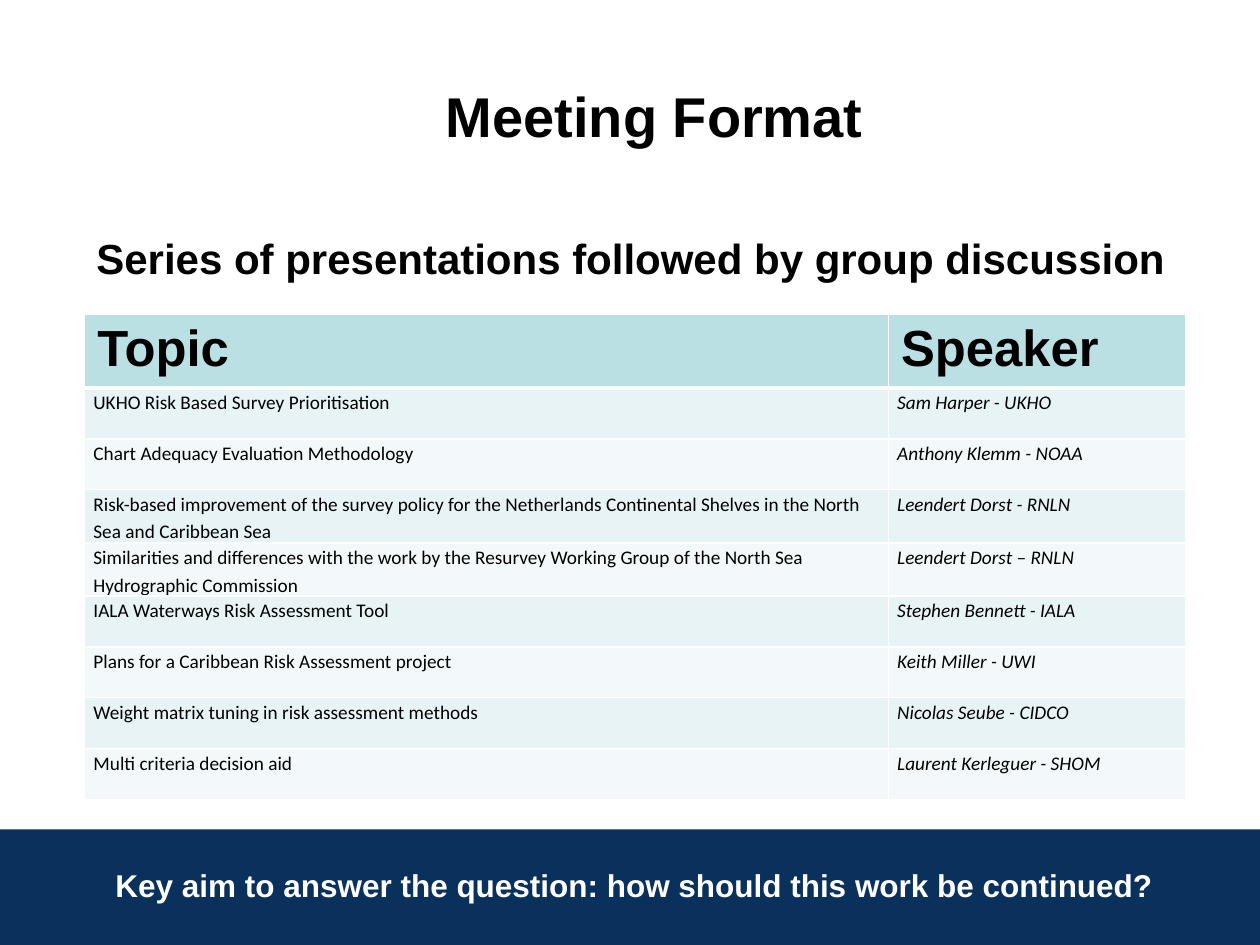
from dataclasses import dataclass

from lxml import etree
from pptx import Presentation
from pptx.dml.color import RGBColor as RGB
from pptx.enum.shapes import MSO_SHAPE as SHAPE
from pptx.enum.text import MSO_ANCHOR as ANCHOR, PP_ALIGN as ALIGN
from pptx.oxml.ns import qn
from pptx.util import Pt


@dataclass(frozen=True)
class Theme:
    heading_font: str = "Arial"
    table_font: str = "Calibri"
    black: str = "000000"
    white: str = "FFFFFF"
    navy: str = "09315B"
    header: str = "BBE0E3"
    bands: tuple = ("E7F3F4", "F3F9FA")
    title: float = 32
    subtitle: float = 24
    table_head: float = 29
    table_body: float = 11
    aim: float = 18


T = Theme()
HEADINGS = ("Topic", "Speaker")
TALKS = [
    ("UKHO Risk Based Survey Prioritisation", "Sam Harper - UKHO"),
    ("Chart Adequacy Evaluation Methodology", "Anthony Klemm - NOAA"),
    ("Risk-based improvement of the survey policy for the Netherlands "
     "Continental Shelves in the North Sea and Caribbean Sea", "Leendert Dorst - RNLN"),
    ("Similarities and differences with the work by the Resurvey Working Group "
     "of the North Sea Hydrographic Commission", "Leendert Dorst – RNLN"),
    ("IALA Waterways Risk Assessment Tool", "Stephen Bennett - IALA"),
    ("Plans for a Caribbean Risk Assessment project", "Keith Miller - UWI"),
    ("Weight matrix tuning in risk assessment methods", "Nicolas Seube - CIDCO"),
    ("Multi criteria decision aid", "Laurent Kerleguer - SHOM"),
]


def style(p, font, size, color, bold=False, italic=False):
    f = p.font
    f.name, f.size, f.bold, f.italic = font, Pt(size), bold, italic
    f.color.rgb = RGB.from_string(color)


def add_text(s, box, text, size, color=T.black, align=ALIGN.CENTER,
             anchor=ANCHOR.BOTTOM, spacing=None, bottom=3.6):
    tf = s.shapes.add_textbox(*map(Pt, box)).text_frame
    tf.word_wrap = True
    tf.vertical_anchor = anchor
    tf.margin_bottom = Pt(bottom)
    p = tf.paragraphs[0]
    p.text, p.alignment, p.line_spacing = text, align, spacing
    style(p, T.heading_font, size, color, bold=True)


def add_banner(s, box):
    sp = s.shapes.add_shape(SHAPE.RECTANGLE, *map(Pt, box))
    sp.shadow.inherit = False
    sp.fill.solid()
    sp.fill.fore_color.rgb = RGB.from_string(T.navy)
    sp.line.fill.background()


def set_borders(cell, bottom):
    tc_pr = cell._tc.get_or_add_tcPr()
    for i, (side, width) in enumerate(zip("LRTB", (1, 1, 1, bottom))):
        ln = etree.Element(qn(f"a:ln{side}"), w=str(Pt(width)))
        fill = etree.SubElement(ln, qn("a:solidFill"))
        etree.SubElement(fill, qn("a:srgbClr"), val=T.white)
        tc_pr.insert(i, ln)


def fill_cell(cell, text, fill, bottom=1):
    cell.text = text
    cell.fill.solid()
    cell.fill.fore_color.rgb = RGB.from_string(fill)
    set_borders(cell, bottom)
    return cell.text_frame.paragraphs[0]


def add_talks(s, left, top, widths, row_height):
    count = len(TALKS) + 1
    table = s.shapes.add_table(count, len(widths), Pt(left), Pt(top),
                               Pt(sum(widths)), Pt(row_height * count)).table
    for col, width in zip(table.columns, widths):
        col.width = Pt(width)
    for row in table.rows:
        row.height = Pt(row_height)
    for c, text in enumerate(HEADINGS):
        p = fill_cell(table.cell(0, c), text, T.header, bottom=3)
        style(p, T.heading_font, T.table_head, T.black, bold=True)
    for r, talk in enumerate(TALKS):
        for c, text in enumerate(talk):
            cell = table.cell(r + 1, c)
            p = fill_cell(cell, text, T.bands[r % 2])
            cell.margin_left = cell.margin_right = Pt(5)
            cell.margin_top = cell.margin_bottom = 0
            p.line_spacing = 1.15
            style(p, T.table_font, T.table_body, T.black, italic=c == 1)


def main():
    """Build the meeting format slide."""
    prs = Presentation()
    prs.slide_width, prs.slide_height = Pt(720), Pt(540)
    s = prs.slides.add_slide(prs.slide_layouts[6])
    add_banner(s, (0, 474, 720, 66))
    add_text(s, (48, 122.4, 635, 329), "Series of presentations followed by group discussion",
             T.subtitle, align=ALIGN.LEFT, anchor=ANCHOR.TOP, spacing=1.25)
    add_text(s, (172.8, 31.7, 402.5, 57), "Meeting Format", T.title)
    add_talks(s, 48.4, 179.6, (459.3, 169.7), 29.1)
    add_text(s, (31, 491, 663, 25.2),
             "Key aim to answer the question: how should this work be continued?",
             T.aim, color=T.white, bottom=0)
    prs.save("out.pptx")


if __name__ == "__main__":
    main()
